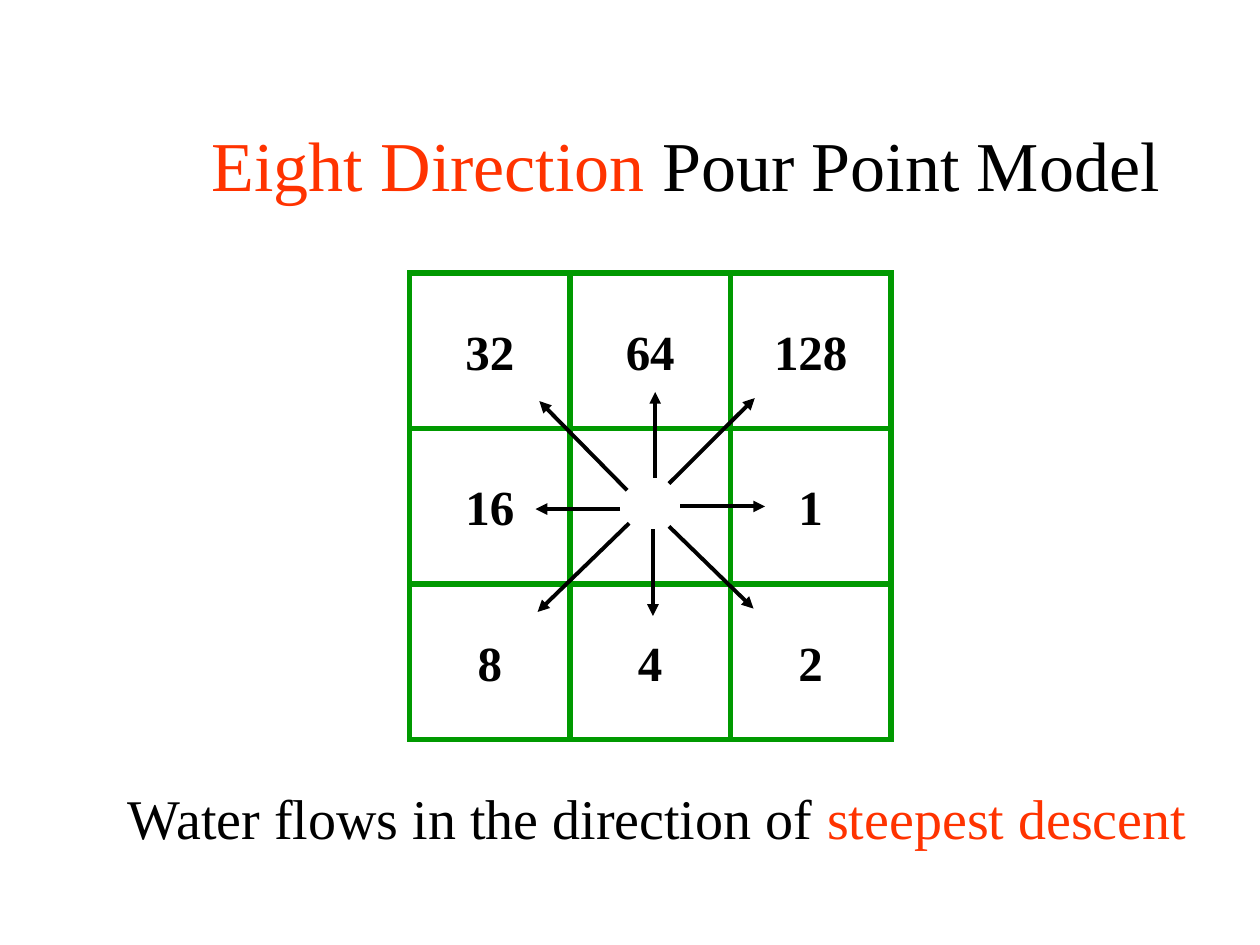
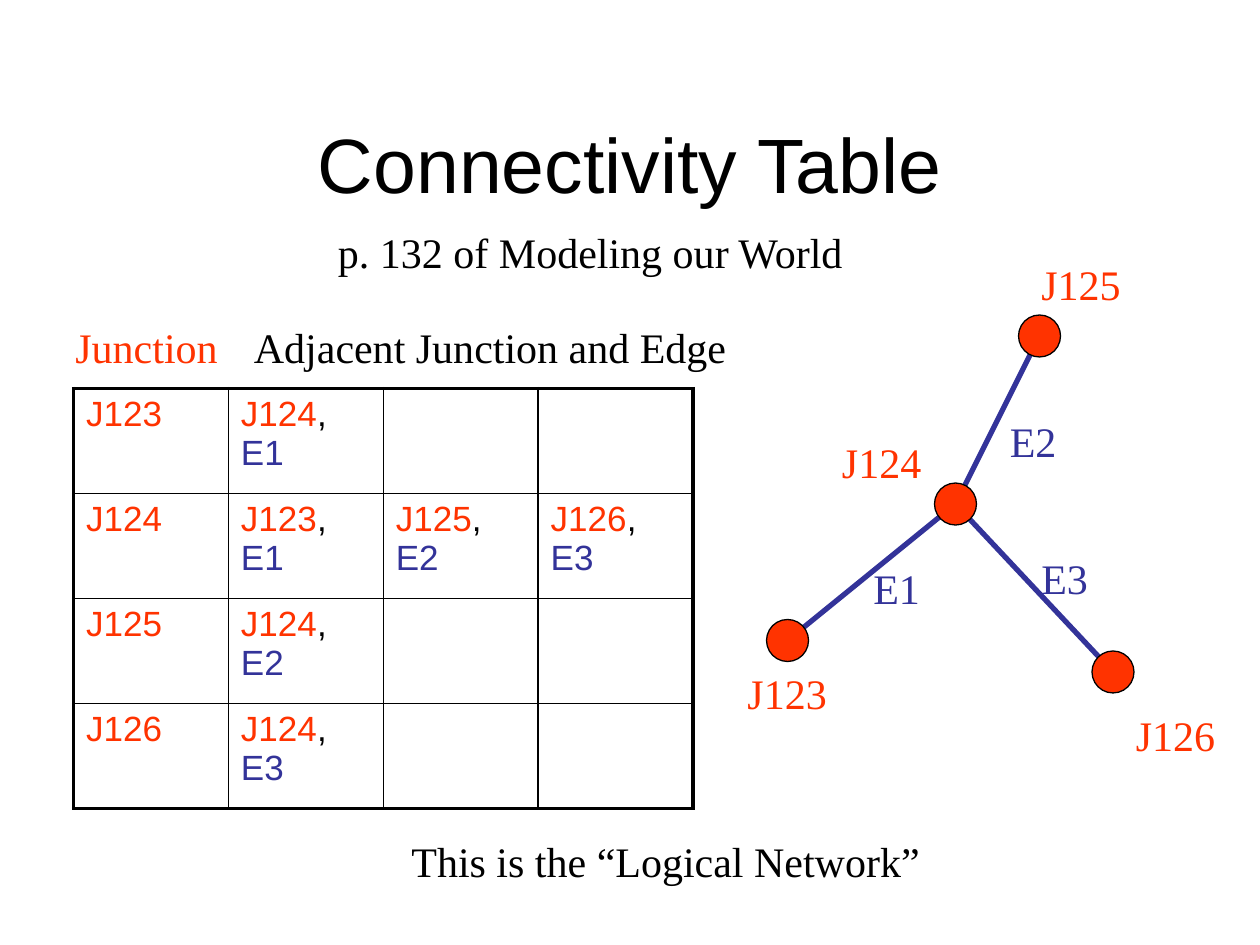
from lxml.etree import SubElement
from pptx import Presentation
from pptx.dml.color import RGBColor
from pptx.enum.shapes import MSO_CONNECTOR, MSO_SHAPE
from pptx.enum.text import MSO_ANCHOR as ANCHOR, PP_ALIGN as ALIGN
from pptx.oxml.ns import qn
from pptx.util import Pt

BLACK, RED, BLUE, GREEN = "000000", "FF3300", "333399", "009900"
SERIF, SANS = "Times New Roman", "Arial"
color = RGBColor.from_string


def write(text_frame, runs, size, font=SERIF, bold=False, align=ALIGN.LEFT):
    paragraph = text_frame.paragraphs[0]
    paragraph.alignment = align
    for text, hex_color in runs:
        run = paragraph.add_run()
        run.text = text
        run.font.name = font
        run.font.size = Pt(size)
        run.font.bold = bold
        run.font.color.rgb = color(hex_color)


def add_line(slide, start, end, hex_color, width):
    line = slide.shapes.add_connector(
        MSO_CONNECTOR.STRAIGHT, Pt(start[0]), Pt(start[1]), Pt(end[0]), Pt(end[1]))
    line.line.color.rgb = color(hex_color)
    line.line.width = Pt(width)
    SubElement(line._element.spPr, qn("a:effectLst"))
    return line


presentation = Presentation()
presentation.slide_width, presentation.slide_height = Pt(720), Pt(540)
blank = presentation.slide_layouts[6]
flow_slide = presentation.slides.add_slide(blank)
network_slide = presentation.slides.add_slide(blank)

# Grid of direction codes
codes = [["32", "64", "128"], ["16", "", "1"], ["8", "4", "2"]]
cell_width, cell_height = 91.7, 88.9
for row, row_codes in enumerate(codes):
    for column, code in enumerate(row_codes):
        square = flow_slide.shapes.add_shape(
            MSO_SHAPE.RECTANGLE,
            Pt(234 + column * cell_width), Pt(156 + row * cell_height),
            Pt(cell_width), Pt(cell_height))
        square.shadow.inherit = False
        square.fill.background()
        square.line.color.rgb = color(GREEN)
        square.line.width = Pt(3)
        SubElement(square.line._get_or_add_ln(), qn("a:miter"), lim="800000")
        square.text_frame.word_wrap = False
        square.text_frame.vertical_anchor = ANCHOR.MIDDLE
        if code:
            write(square.text_frame, [(code, BLACK)], 28, bold=True, align=ALIGN.CENTER)

# Arrows out of the centre cell
arrows = [
    ((374.4, 273), (374.4, 224)),
    ((382.3, 276.3), (431.3, 227.5)),
    ((388.8, 289.4), (437.2, 289.4)),
    ((382.3, 300.8), (430.6, 347.8)),
    ((373.1, 302.4), (373.1, 352)),
    ((359.5, 299), (307.2, 349.7)),
    ((354.4, 290.9), (306, 290.9)),
    ((358.4, 280.2), (308.2, 229.2)),
]
for start, end in arrows:
    arrow = add_line(flow_slide, start, end, BLACK, 2.25)
    SubElement(arrow.line._get_or_add_ln(), qn("a:tailEnd"), type="triangle")

# Network edges and junctions
junctions = {"J125": (594, 192), "J123": (450, 366), "J124": (546, 288), "J126": (636, 384)}
for neighbour in ("J125", "J123", "J126"):
    add_line(network_slide, junctions["J124"], junctions[neighbour], BLUE, 3)
diameter = 24
for x, y in junctions.values():
    dot = network_slide.shapes.add_shape(
        MSO_SHAPE.OVAL, Pt(x - diameter / 2), Pt(y - diameter / 2), Pt(diameter), Pt(diameter))
    dot.shadow.inherit = False
    dot.fill.solid()
    dot.fill.fore_color.rgb = color(RED)
    dot.line.color.rgb = color(BLACK)
    dot.line.width = Pt(0.75)

# Connectivity table: each junction with its (neighbour, edge) pairs
connections = [
    ("J123", [("J124", "E1")]),
    ("J124", [("J123", "E1"), ("J125", "E2"), ("J126", "E3")]),
    ("J125", [("J124", "E2")]),
    ("J126", [("J124", "E3")]),
]
count = 4
table = network_slide.shapes.add_table(
    count, count, Pt(42), Pt(222), Pt(354), Pt(240)).table
table.first_row = table.horz_banding = False
for row, (junction, pairs) in enumerate(connections):
    contents = [[(junction, RED)]]
    contents += [[(other, RED), (", ", BLACK), (edge, BLUE)] for other, edge in pairs]
    for column in range(count):
        cell = table.cell(row, column)
        outer_sides = {"a:lnL": column == 0, "a:lnR": column == count - 1,
                       "a:lnT": row == 0, "a:lnB": row == count - 1}
        properties = cell._tc.get_or_add_tcPr()
        for tag, is_outer in outer_sides.items():
            border = SubElement(properties, qn(tag), w=str(Pt(2.25 if is_outer else 1)))
            fill = SubElement(border, qn("a:solidFill"))
            SubElement(fill, qn("a:srgbClr"), val=BLACK)
        cell.fill.background()
        if column < len(contents):
            write(cell.text_frame, contents[column], 20, SANS)

# Title of the network slide
title = network_slide.shapes.add_textbox(Pt(54), Pt(48), Pt(612), Pt(90)).text_frame
title.word_wrap = True
title.vertical_anchor = ANCHOR.MIDDLE
write(title, [("Connectivity Table", BLACK)], 44, SANS, align=ALIGN.CENTER)

# Headings and captions: slide, left, top, width, size, runs
labels = [
    (flow_slide, 114, 66, 557, 40, [("Eight Direction", RED), (" Pour Point Model", BLACK)]),
    (flow_slide, 66, 444, 622, 32,
     [("Water flows in the direction of ", BLACK), ("steepest descent", RED)]),
    (network_slide, 186, 126, 306, 24, [("p. 132 of Modeling our World", BLACK)]),
    (network_slide, 36, 180, 97, 24, [("Junction", RED)]),
    (network_slide, 138, 180, 286, 24, [("Adjacent Junction and Edge", BLACK)]),
    (network_slide, 228, 474, 306, 24, [("This is the “Logical Network”", BLACK)]),
]
# Labels of the network
network_labels = [
    ("J124", 474, 246), ("J125", 588, 144), ("J123", 420, 378), ("J126", 642, 402),
    ("E1", 492, 318), ("E2", 570, 234), ("E3", 588, 312),
]
for name, left, top in network_labels:
    width, hex_color = (60, RED) if name.startswith("J") else (41, BLUE)
    labels.append((network_slide, left, top, width, 24, [(name, hex_color)]))

for slide, left, top, width, size, runs in labels:
    box = slide.shapes.add_textbox(Pt(left), Pt(top), Pt(width), Pt(size * 1.2 + 7.2))
    box.text_frame.word_wrap = False
    write(box.text_frame, runs, size)

presentation.save("out.pptx")
